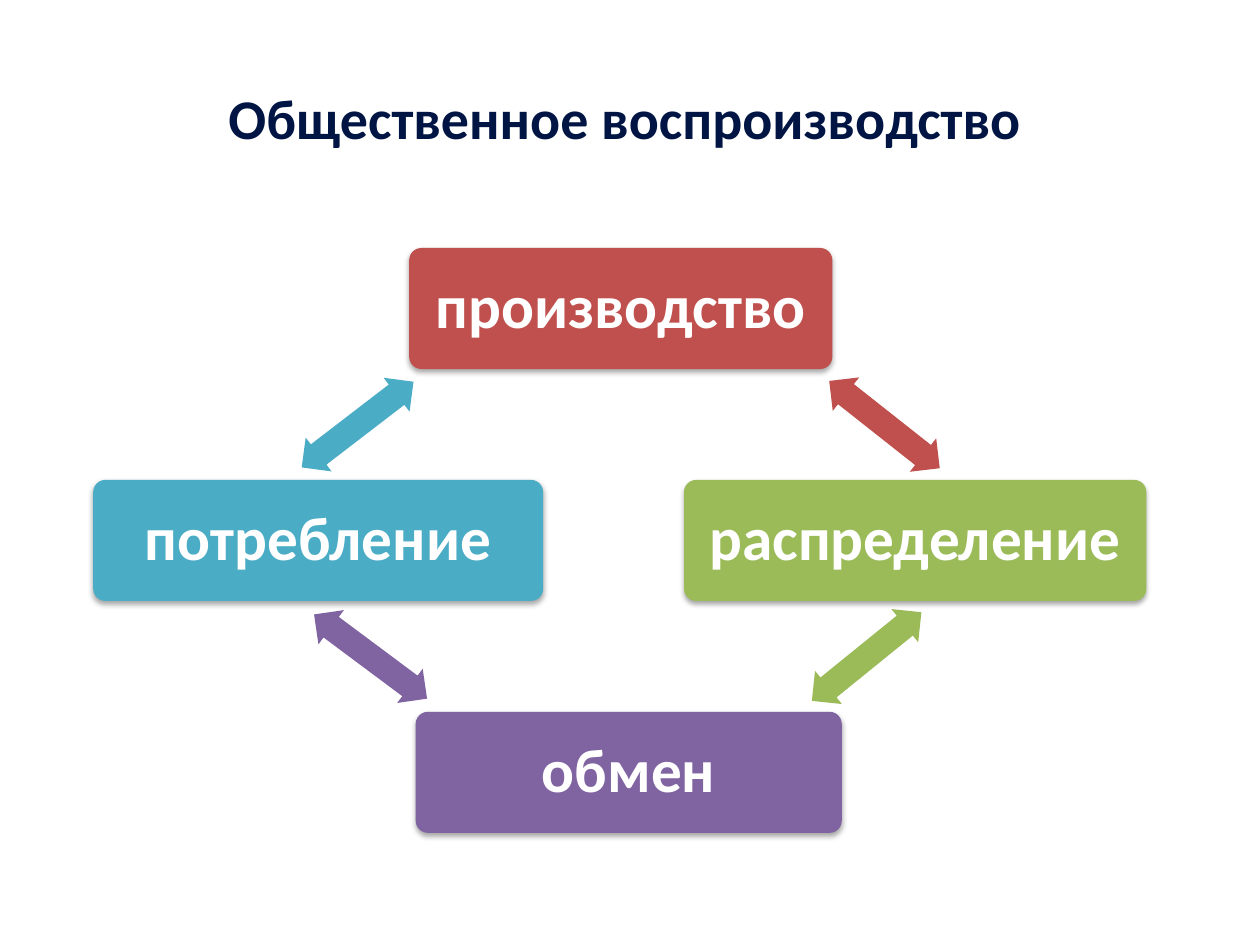
from lxml.etree import SubElement
from pptx import Presentation
from pptx.dml.color import RGBColor
from pptx.enum.shapes import MSO_SHAPE
from pptx.enum.text import MSO_ANCHOR, PP_ALIGN
from pptx.oxml.ns import qn
from pptx.util import Cm, Pt

NAVY = RGBColor(0x00, 0x15, 0x43)
WHITE = RGBColor(0xFF, 0xFF, 0xFF)
RED = RGBColor(0xC0, 0x50, 0x4D)
GREEN = RGBColor(0x9B, 0xBB, 0x59)
PURPLE = RGBColor(0x80, 0x64, 0xA2)
TEAL = RGBColor(0x4B, 0xAC, 0xC6)

TOP, ROW_STEP, BOX_H = 5.0, 4.675, 2.44
ARROW_W, ARROW_H, ARROW_DROP = 2.84, 0.86, 3.13

# label, colour, box row, box left, box width, arrow row, arrow left, arrow angle
STAGES = [
    ("производство", RED, 0, 8.25, 8.53, 0, 16.41, 38.3),
    ("распределение", GREEN, 1, 13.79, 9.32, 1, 16.05, 141),
    ("обмен", PURPLE, 2, 8.38, 8.59, 1, 6.05, 216.7),
    ("потребление", TEAL, 1, 1.88, 9.07, 0, 5.79, 322.5),
]


def write(tf, text, size, color):
    tf.text = text
    p = tf.paragraphs[0]
    p.alignment = PP_ALIGN.CENTER
    font = p.runs[0].font
    font.name, font.size, font.bold = "Calibri", Pt(size), True
    font.color.rgb = color


def add_filled(kind, left, top, width, height, color):
    sp = slide.shapes.add_shape(kind, Cm(left), Cm(top), Cm(width), Cm(height))
    sp.shadow.inherit = False
    sp.fill.solid()
    sp.fill.fore_color.rgb = color
    sp.line.fill.background()
    return sp


prs = Presentation()
prs.slide_width, prs.slide_height = Cm(25.4), Cm(19.05)
slide = prs.slides.add_slide(prs.slide_layouts[6])

for label, color, row, left, width, arrow_row, arrow_left, angle in STAGES:
    box = add_filled(MSO_SHAPE.ROUNDED_RECTANGLE, left, TOP + row * ROW_STEP,
                     width, BOX_H, color)
    box.adjustments[0] = 0.1
    effects = box._element.spPr.find(qn("a:effectLst"))
    shadow = SubElement(effects, qn("a:outerShdw"), blurRad=str(Pt(3.1)),
                        dist=str(Pt(1.8)), dir="5400000", rotWithShape="0")
    black = SubElement(shadow, qn("a:srgbClr"), val="000000")
    SubElement(black, qn("a:alpha"), val="35000")

    tf = box.text_frame
    tf.word_wrap = True
    tf.vertical_anchor = MSO_ANCHOR.MIDDLE
    tf.margin_left = tf.margin_right = tf.margin_top = tf.margin_bottom = Cm(0.38)
    write(tf, label, 35, WHITE)
    tf.paragraphs[0].line_spacing = 0.9

    arrow = add_filled(MSO_SHAPE.LEFT_RIGHT_ARROW, arrow_left,
                       TOP + ARROW_DROP + arrow_row * ROW_STEP,
                       ARROW_W, ARROW_H, color)
    arrow.adjustments[0], arrow.adjustments[1] = 0.6, 0.5
    arrow.rotation = angle

title = slide.shapes.add_textbox(Cm(1.3), Cm(1.55), Cm(22.6), Cm(1.63))
title.text_frame.word_wrap = True
write(title.text_frame, "Общественное воспроизводство", 32, NAVY)

prs.save("out.pptx")
